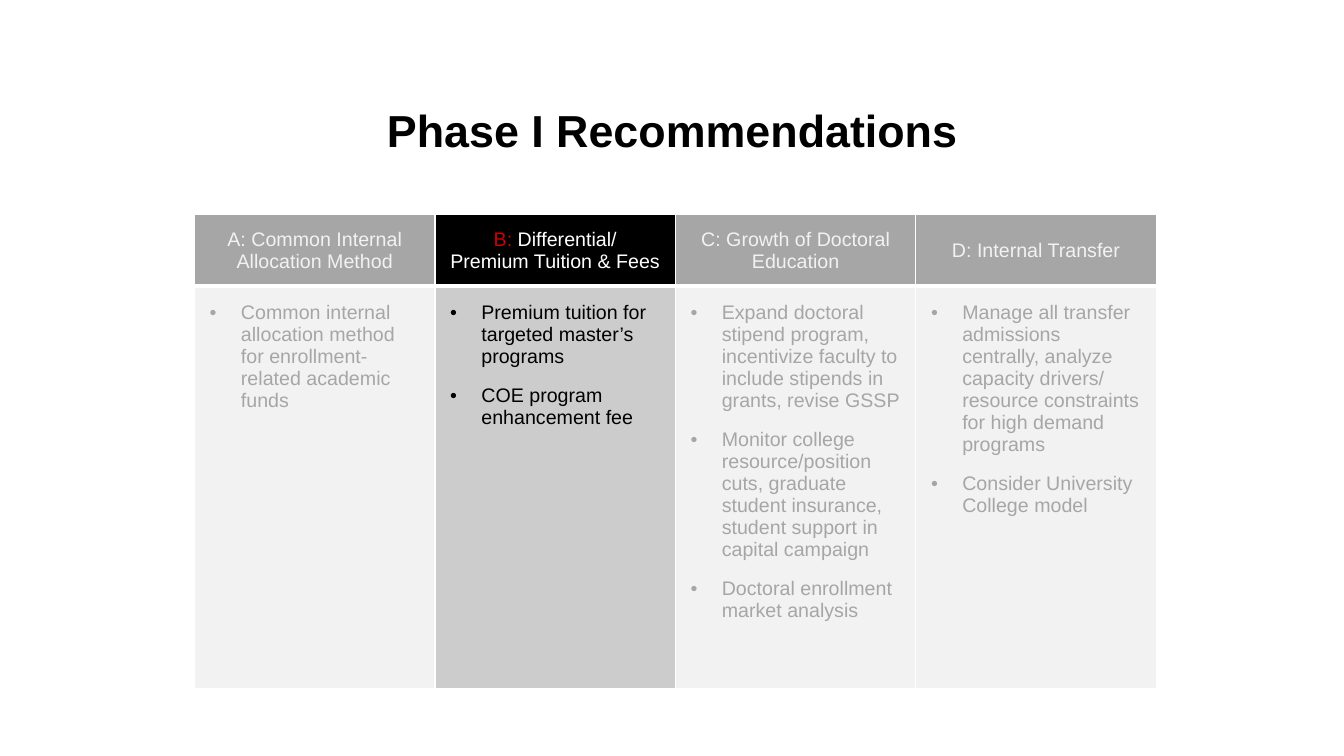
"""Build the Phase I Recommendations slide with its four-column table."""
from dataclasses import dataclass

from lxml import etree
from pptx import Presentation
from pptx.dml.color import RGBColor
from pptx.enum.text import MSO_ANCHOR, PP_ALIGN
from pptx.oxml.ns import qn
from pptx.slide import Slide
from pptx.table import Table, _Cell
from pptx.text.text import _Paragraph, _Run
from pptx.util import Inches, Pt

CENTER = PP_ALIGN.CENTER
LEFT = PP_ALIGN.LEFT
MIDDLE = MSO_ANCHOR.MIDDLE
TOP = MSO_ANCHOR.TOP

BLACK = RGBColor(0x00, 0x00, 0x00)
WHITE = RGBColor(0xFF, 0xFF, 0xFF)
RED = RGBColor(0xCC, 0x00, 0x00)
MID_GRAY = RGBColor(0xA6, 0xA6, 0xA6)
LIGHT_GRAY = RGBColor(0xCC, 0xCC, 0xCC)
PALE_GRAY = RGBColor(0xF2, 0xF2, 0xF2)

FONT = "Arial"
COLUMN_WIDTH = 2.385
ROW_HEIGHTS = (0.71, 3.99)
BODY_MARGIN = Inches(0.15)
BULLET_INDENT = Inches(0.31)


@dataclass(frozen=True)
class Palette:
    header_fill: RGBColor
    header_text: RGBColor
    body_fill: RGBColor
    body_text: RGBColor


@dataclass(frozen=True)
class Recommendation:
    heading: tuple[str, ...]
    actions: tuple[str, ...]
    palette: Palette
    accent: str = ""
    space_after: int = 12


MUTED = Palette(MID_GRAY, PALE_GRAY, PALE_GRAY, MID_GRAY)
ACTIVE = Palette(BLACK, WHITE, LIGHT_GRAY, BLACK)

RECOMMENDATIONS = (
    Recommendation(
        ("A: Common Internal Allocation Method",),
        ("Common internal allocation method for enrollment-related academic funds",),
        MUTED,
        space_after=0,
    ),
    Recommendation(
        (" Differential/", "Premium Tuition & Fees"),
        ("Premium tuition for targeted master’s programs", "COE program enhancement fee"),
        ACTIVE,
        accent="B:",
    ),
    Recommendation(
        ("C: Growth of Doctoral Education",),
        (
            "Expand doctoral stipend program, incentivize faculty to include "
            "stipends in grants, revise GSSP",
            "Monitor college resource/position cuts, graduate student insurance, "
            "student support in capital campaign",
            "Doctoral enrollment market analysis",
        ),
        MUTED,
    ),
    Recommendation(
        ("D: Internal Transfer",),
        (
            "Manage all transfer admissions centrally, analyze capacity drivers/ "
            "resource constraints for high demand programs",
            "Consider University College model",
        ),
        MUTED,
    ),
)


def add_run(paragraph: _Paragraph, text: str, color: RGBColor, size: int = 14) -> _Run:
    run = paragraph.add_run()
    run.text = text
    run.font.name = FONT
    run.font.size = Pt(size)
    run.font.bold = False
    run.font.color.rgb = color
    return run


def add_bullet(paragraph: _Paragraph) -> None:
    properties = paragraph._p.get_or_add_pPr()
    properties.set("marL", str(BULLET_INDENT))
    properties.set("indent", str(-BULLET_INDENT))
    etree.SubElement(properties, qn("a:buFont"), typeface=FONT)
    etree.SubElement(properties, qn("a:buChar"), char="•")


def style_cell(cell: _Cell, fill: RGBColor, bottom_width: int) -> None:
    properties = cell._tc.get_or_add_tcPr()
    for side, width in (("L", 1), ("R", 1), ("T", 1), ("B", bottom_width)):
        border = etree.SubElement(properties, qn(f"a:ln{side}"), w=str(Pt(width)))
        solid = etree.SubElement(border, qn("a:solidFill"))
        etree.SubElement(solid, qn("a:srgbClr"), val=str(WHITE))
    cell.fill.solid()
    cell.fill.fore_color.rgb = fill


def fill_header(cell: _Cell, recommendation: Recommendation) -> None:
    palette = recommendation.palette
    style_cell(cell, palette.header_fill, bottom_width=3)
    cell.vertical_anchor = MIDDLE
    frame = cell.text_frame
    for index, line in enumerate(recommendation.heading):
        paragraph = frame.add_paragraph() if index else frame.paragraphs[0]
        paragraph.alignment = CENTER
        if recommendation.accent and index == 0:
            add_run(paragraph, recommendation.accent, RED)
        add_run(paragraph, line, palette.header_text)


def fill_body(cell: _Cell, recommendation: Recommendation) -> None:
    palette = recommendation.palette
    style_cell(cell, palette.body_fill, bottom_width=1)
    cell.vertical_anchor = TOP
    cell.margin_left = cell.margin_right = BODY_MARGIN
    cell.margin_top = cell.margin_bottom = BODY_MARGIN
    frame = cell.text_frame
    for index, action in enumerate(recommendation.actions):
        paragraph = frame.add_paragraph() if index else frame.paragraphs[0]
        add_bullet(paragraph)
        paragraph.alignment = LEFT
        paragraph.space_after = Pt(recommendation.space_after)
        add_run(paragraph, action, palette.body_text)


def add_title(slide: Slide) -> None:
    title = slide.shapes.add_textbox(Inches(1.67), Inches(0.73), Inches(10), Inches(1.12))
    frame = title.text_frame
    frame.word_wrap = True
    frame.vertical_anchor = MIDDLE
    heading = frame.paragraphs[0]
    heading.alignment = CENTER
    add_run(heading, "Phase I Recommendations", BLACK, size=32).font.bold = True


def add_recommendations(slide: Slide) -> Table:
    count = len(RECOMMENDATIONS)
    table = slide.shapes.add_table(
        len(ROW_HEIGHTS), count, Inches(1.93), Inches(2.13),
        Inches(COLUMN_WIDTH * count), Inches(sum(ROW_HEIGHTS)),
    ).table
    table.first_row = False
    table.horz_banding = False
    for row, height in zip(table.rows, ROW_HEIGHTS):
        row.height = Inches(height)
    for index, recommendation in enumerate(RECOMMENDATIONS):
        table.columns[index].width = Inches(COLUMN_WIDTH)
        fill_header(table.cell(0, index), recommendation)
        fill_body(table.cell(1, index), recommendation)
    return table


def main() -> None:
    presentation = Presentation()
    presentation.slide_width = Inches(13.33)
    presentation.slide_height = Inches(7.5)
    slide = presentation.slides.add_slide(presentation.slide_layouts[6])
    add_title(slide)
    add_recommendations(slide)
    presentation.save("out.pptx")


if __name__ == "__main__":
    main()
